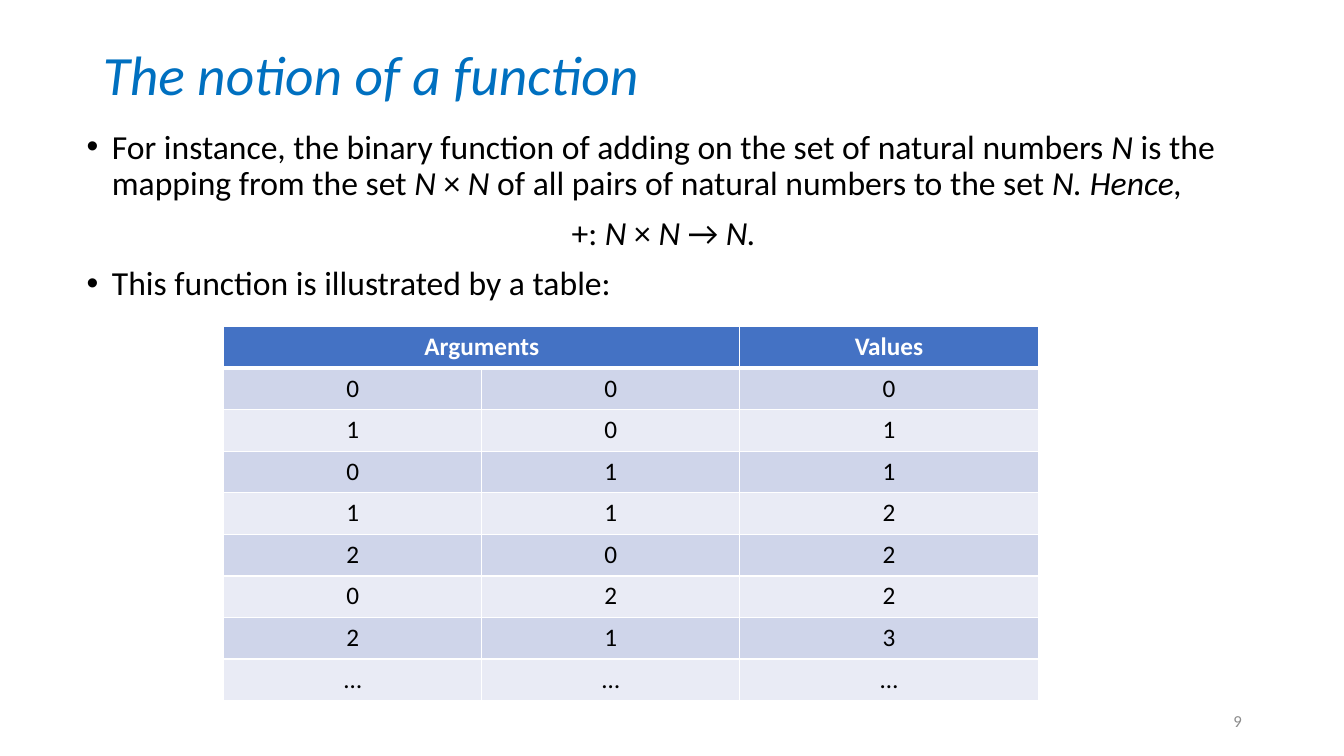
from itertools import product

from lxml.etree import SubElement
from pptx import Presentation
from pptx.dml.color import RGBColor
from pptx.enum.text import MSO_ANCHOR, MSO_AUTO_SIZE, PP_ALIGN
from pptx.oxml.ns import qn
from pptx.util import Inches, Pt

GRID_COLUMNS, GRID_ROWS = 40, 30

POINTS = [
    ("For instance, the binary function of adding on the set of natural numbers "
     "*N *is the mapping from the set *N *× *N *of all pairs of natural numbers "
     "to the set *N. Hence,*", True),
    ("+: *N *× *N *→ *N.*", False),
    ("This function is illustrated by a table:", True),
]
SUMS = [(0, 0, 0), (1, 0, 1), (0, 1, 1), (1, 1, 2), (2, 0, 2), (0, 2, 2), (2, 1, 3)]
ADDITION = [("Arguments", "", "Values"), *SUMS, ("…", "…", "…")]


def color(value):
    return RGBColor.from_string(value)


def write(para, text, size=18, ink="000000", italic=False, bold=False,
          align=PP_ALIGN.LEFT, spacing=1.0, before=0):
    para.alignment = align
    para.line_spacing = spacing
    para.space_before = Pt(before)
    for index, part in enumerate(text.split("*")):
        if part:
            span = para.add_run()
            span.text = part
            span.font.name = "Calibri"
            span.font.size = Pt(size)
            span.font.color.rgb = color(ink)
            span.font.bold = bold
            span.font.italic = italic or index % 2 == 1


class FunctionSlide:
    accent, header, bands, rule = "0070C0", "4472C4", ("E9EBF5", "CFD5EA"), "FFFFFF"

    def __init__(self, deck):
        self.column = deck.slide_width / GRID_COLUMNS
        self.row = deck.slide_height / GRID_ROWS
        self.page = deck.slides.add_slide(deck.slide_layouts[1])

    def place(self, left, top, width, height):
        return (round(left * self.column), round(top * self.row),
                round(width * self.column), round(height * self.row))

    def fit(self, box, area, anchor):
        box.left, box.top, box.width, box.height = self.place(*area)
        frame = box.text_frame
        frame.word_wrap = True
        frame.auto_size = MSO_AUTO_SIZE.NONE
        frame.vertical_anchor = anchor
        return frame

    def title(self, text, area):
        frame = self.fit(self.page.shapes.title, area, MSO_ANCHOR.MIDDLE)
        write(frame.paragraphs[0], text, size=39.6, ink=self.accent,
              italic=True, spacing=0.9)

    def body(self, points, area):
        frame = self.fit(self.page.placeholders[1], area, MSO_ANCHOR.TOP)
        for index, (text, bulleted) in enumerate(points):
            para = frame.add_paragraph() if index else frame.paragraphs[0]
            write(para, text, size=24, spacing=0.9, before=10,
                  align=PP_ALIGN.LEFT if bulleted else PP_ALIGN.CENTER)
            self.bullet(para, Inches(0.25) if bulleted else 0)

    def bullet(self, para, indent):
        settings = para._p.get_or_add_pPr()
        settings.set("marL", str(indent))
        settings.set("indent", str(-indent))
        if indent:
            SubElement(settings, qn("a:buFont"), typeface="Arial")
            SubElement(settings, qn("a:buChar"), char="•")
        else:
            SubElement(settings, qn("a:buNone"))

    def number(self, text, area):
        box = self.page.shapes.add_textbox(*self.place(*area))
        frame = self.fit(box, area, MSO_ANCHOR.MIDDLE)
        write(frame.paragraphs[0], text, size=12, ink="8C8C8C", align=PP_ALIGN.RIGHT)

    def borders(self, cell, top, bottom):
        settings = cell._tc.get_or_add_tcPr()
        for side, width in (("L", 1), ("R", 1), ("T", top), ("B", bottom)):
            line = SubElement(settings, qn(f"a:ln{side}"), w=str(Pt(width)))
            fill = SubElement(line, qn("a:solidFill"))
            SubElement(fill, qn("a:srgbClr"), val=self.rule)

    def table(self, rows, left, top, widths, height):
        area = self.place(left, top, sum(widths), height * len(rows))
        grid = self.page.shapes.add_table(len(rows), len(widths), *area).table
        for column, width in zip(grid.columns, widths):
            column.width = round(width * self.column)
        for row in grid.rows:
            row.height = round(height * self.row)
        for r, c in product(range(len(rows)), range(len(widths))):
            cell = grid.cell(r, c)
            heading = r == 0
            self.borders(cell, 3 if r == 1 else 1, 3 if heading else 1)
            cell.fill.solid()
            cell.fill.fore_color.rgb = color(self.header if heading else self.bands[r % 2])
            write(cell.text_frame.paragraphs[0], str(rows[r][c]), bold=heading,
                  ink="FFFFFF" if heading else "000000", align=PP_ALIGN.CENTER)
        grid.cell(0, 0).merge(grid.cell(0, 1))


def main():
    deck = Presentation()
    deck.slide_width, deck.slide_height = Inches(13.33), Inches(7.5)
    slide = FunctionSlide(deck)
    slide.title("The notion of a function", (2.76, 1.6, 34.5, 2.92))
    slide.body(POINTS, (2.28, 4.96, 34.95, 22.08))
    slide.number("9", (28.26, 27.8, 9, 1.6))
    slide.table(ADDITION, 6.66, 12.96, (7.68, 7.68, 8.88), 1.65)
    deck.save("out.pptx")


if __name__ == "__main__":
    main()
